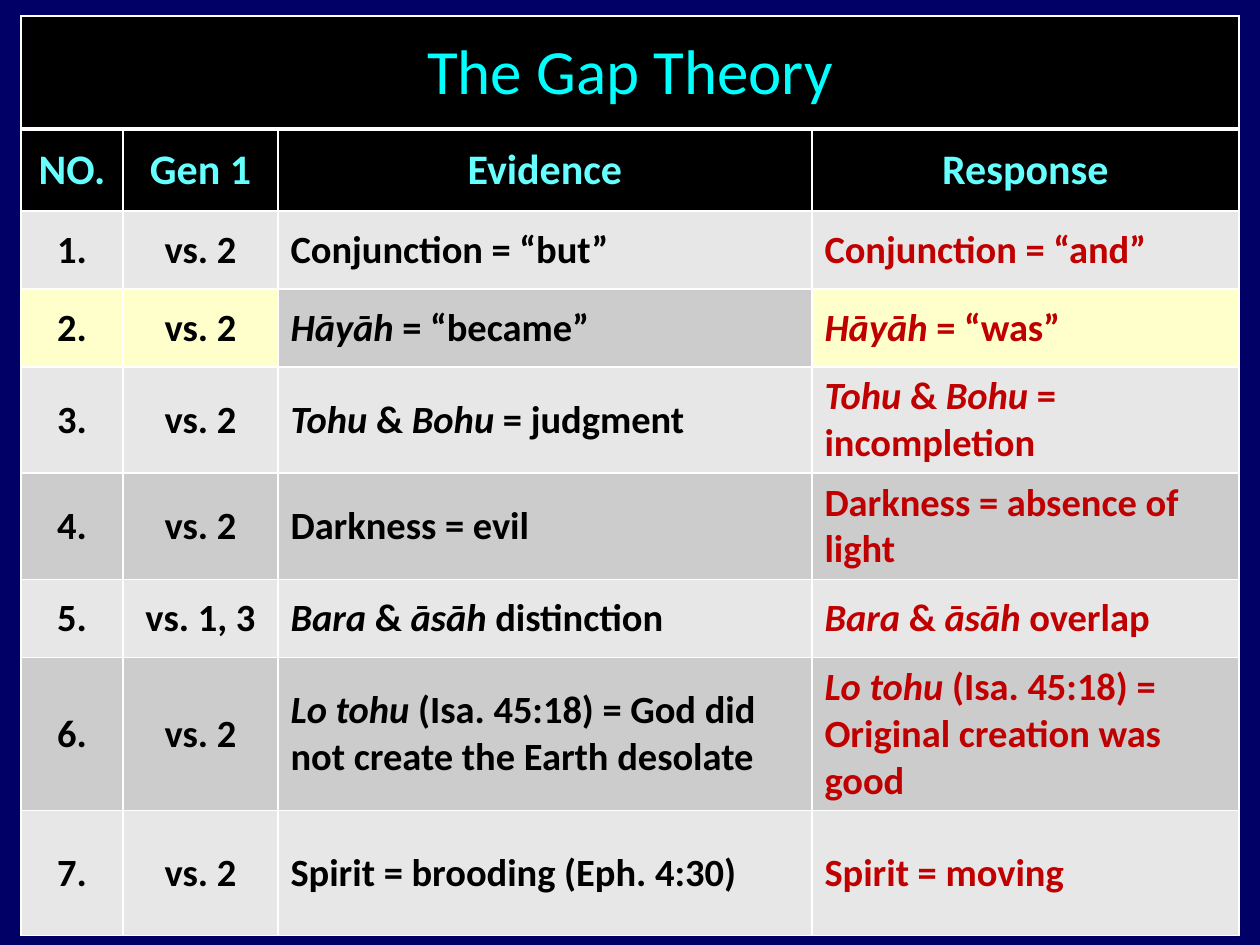
from lxml import etree
from pptx import Presentation
from pptx.dml.color import RGBColor
from pptx.enum.text import MSO_ANCHOR, PP_ALIGN
from pptx.oxml.ns import qn
from pptx.util import Pt

CENTER, LEFT = PP_ALIGN.CENTER, PP_ALIGN.LEFT
MIDDLE = MSO_ANCHOR.MIDDLE
EMU_PER_PX = 914400 / 126

THEME = {
    "font": "Calibri",
    "background": "000066", "border": "FFFFFF", "black": "000000",
    "title": "00FFFF", "header": "66FFFF", "response": "C00000",
    "light_band": "E7E7E7", "dark_band": "CCCCCC", "highlight": "FFFFCC",
    "title_size": 36, "header_size": 24, "body_size": 22,
}

COLUMN_WIDTHS = [102, 155, 534, 427]
ROW_HEIGHTS = [113, 82, 78, 78, 101, 101, 78, 150, 125]
TITLE = "The Gap Theory"
HEADERS = ["NO.", "Gen 1", "Evidence", "Response"]
# Asterisks enclose italic words
ARGUMENTS = [
    ["vs. 2", "Conjunction = “but”", "Conjunction = “and”"],
    ["vs. 2", "*Hāyāh* = “became”", "*Hāyāh* = “was”"],
    ["vs. 2", "*Tohu* & *Bohu* = judgment", "*Tohu* & *Bohu* = incompletion"],
    ["vs. 2", "Darkness = evil", "Darkness = absence of light"],
    ["vs. 1, 3", "*Bara* & *āsāh* distinction", "*Bara* & *āsāh* overlap"],
    ["vs. 2", "*Lo tohu* (Isa. 45:18) = God did not create the Earth desolate",
     "*Lo tohu *(Isa. 45:18) = Original creation was good"],
    ["vs. 2", "Spirit = brooding (Eph. 4:30)", "Spirit = moving"],
]
HIGHLIGHTED = {(2, 0), (2, 1), (2, 3)}  # argument number, column


def px(length):
    return round(length * EMU_PER_PX)


def format_cell(cell, text, fill, color, size, bold, alignment, thick_sides=()):
    """Border, fill and write one cell."""
    properties = cell._tc.get_or_add_tcPr()
    for side in "LRTB":
        width = Pt(3 if side in thick_sides else 1)
        line = etree.SubElement(properties, qn(f"a:ln{side}"), w=str(width))
        solid = etree.SubElement(line, qn("a:solidFill"))
        etree.SubElement(solid, qn("a:srgbClr"), val=THEME["border"])
    cell.fill.solid()
    cell.fill.fore_color.rgb = RGBColor.from_string(THEME[fill])
    cell.vertical_anchor = MIDDLE
    paragraph = cell.text_frame.paragraphs[0]
    paragraph.alignment = alignment
    for index, part in enumerate(text.split("*")):
        if part:
            run = paragraph.add_run()
            run.text = part
            font_values = {"name": THEME["font"], "size": Pt(THEME[size]),
                           "bold": bold, "italic": index % 2 == 1}
            for name, value in font_values.items():
                setattr(run.font, name, value)
            run.font.color.rgb = RGBColor.from_string(THEME[color])


# Slide and background
presentation = Presentation()
presentation.slide_width, presentation.slide_height = px(1260), px(945)
slide = presentation.slides.add_slide(presentation.slide_layouts[6])
slide.background.fill.solid()
slide.background.fill.fore_color.rgb = RGBColor.from_string(THEME["background"])

# Table grid
shape = slide.shapes.add_table(len(ROW_HEIGHTS), len(COLUMN_WIDTHS),
                               px(21), px(16), px(1218), px(916))
table = shape.table
table.first_row = table.horz_banding = False
for column, width in zip(table.columns, COLUMN_WIDTHS):
    column.width = px(width)
for row, height in zip(table.rows, ROW_HEIGHTS):
    row.height = px(height)
shape.height = px(916)

# Title row across all columns
table.cell(0, 0).merge(table.cell(0, 3))
for column in range(4):
    format_cell(table.cell(0, column), "" if column else TITLE, "black",
                "title", "title_size", False, CENTER, "B")

# Column headers
for column, header in enumerate(HEADERS):
    format_cell(table.cell(1, column), header, "black",
                "header", "header_size", True, CENTER, "T")

# Numbered arguments in alternating bands
for number, argument in enumerate(ARGUMENTS, start=1):
    band = "light_band" if number % 2 else "dark_band"
    for column, text in enumerate([f"{number}.", *argument]):
        fill = "highlight" if (number, column) in HIGHLIGHTED else band
        color = "response" if column == 3 else "black"
        alignment = CENTER if column < 2 else LEFT
        format_cell(table.cell(number + 1, column), text, fill,
                    color, "body_size", True, alignment)

presentation.save("out.pptx")
